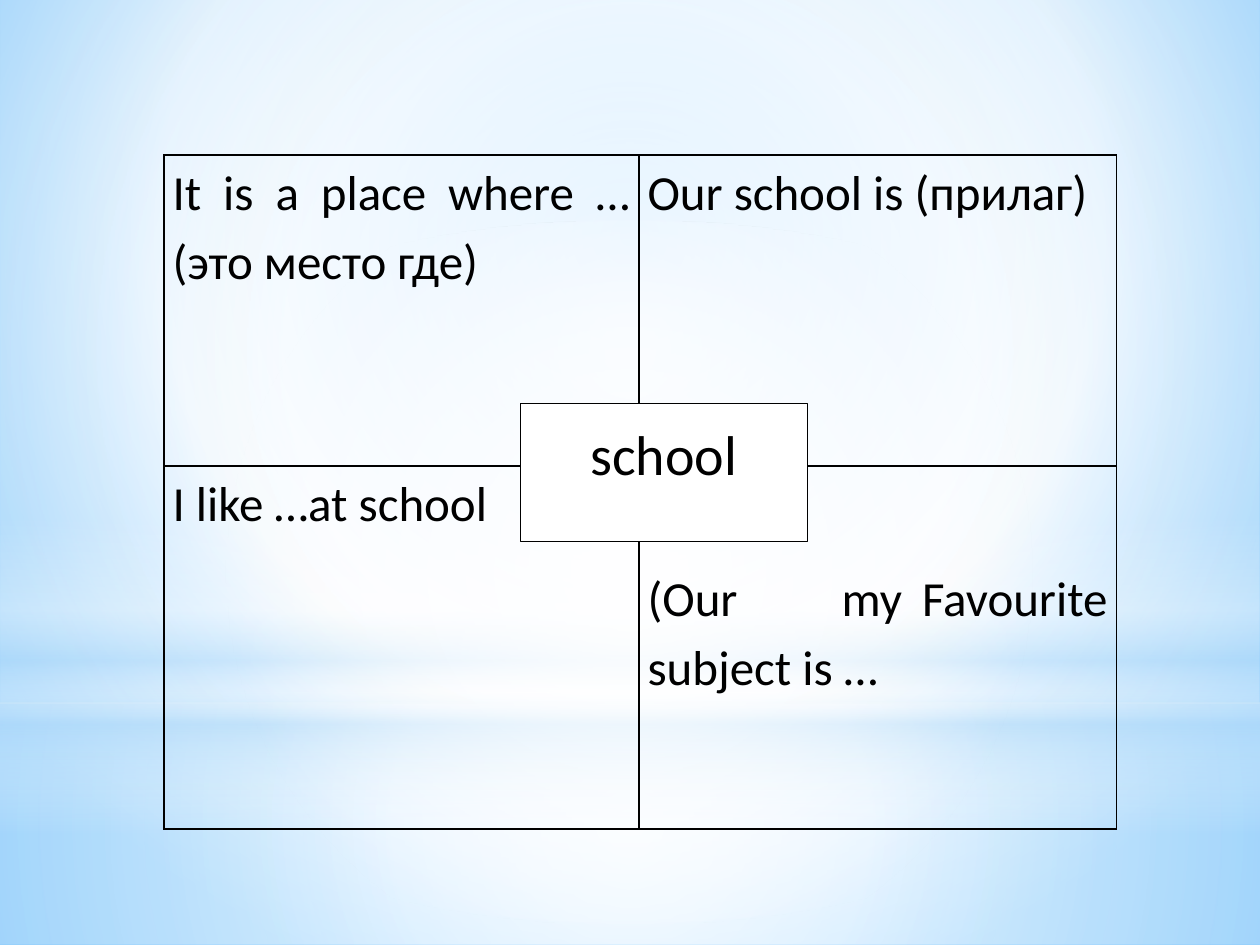
from dataclasses import dataclass

from lxml.etree import SubElement
from pptx import Presentation
from pptx.dml.color import RGBColor
from pptx.enum.shapes import MSO_SHAPE
from pptx.enum.text import MSO_ANCHOR, PP_ALIGN
from pptx.oxml import parse_xml
from pptx.oxml.ns import nsdecls, qn
from pptx.util import Inches, Pt

BLACK = "000000"
WHITE = "FFFFFF"
PALE_BLUE = "B4DCFA"
CENTER = (50, 50, 50, 50)


@dataclass
class Stop:
    position: int
    color: str
    opacity: int = 100


@dataclass
class Glow:
    shape_type: MSO_SHAPE
    top: float
    height: float
    stops: list[Stop]
    focus: tuple | None = CENTER  # None gives a vertical linear gradient


@dataclass
class Prompt:
    row: int
    column: int
    text: str
    margin_top: float = 0
    tab: float | None = None


BACKGROUND_STOPS = [Stop(0, "9ED5FF"), Stop(60, WHITE), Stop(100, "5BB9FF")]
GLOWS = [
    Glow(MSO_SHAPE.RECTANGLE, 5.58, 1.92,
         [Stop(0, WHITE, 91), Stop(37, WHITE, 76), Stop(100, PALE_BLUE, 79)]),
    Glow(MSO_SHAPE.RECTANGLE, 0, 5.58,
         [Stop(0, WHITE, 89), Stop(48, WHITE, 62), Stop(100, PALE_BLUE, 79)]),
    Glow(MSO_SHAPE.RECTANGLE, 4.12, 2.5,
         [Stop(0, WHITE, 0), Stop(29, WHITE, 30), Stop(45, PALE_BLUE, 40),
          Stop(55, WHITE, 26), Stop(65, PALE_BLUE, 60), Stop(100, WHITE, 0)], None),
    Glow(MSO_SHAPE.OVAL, 1.75, 5.58, [Stop(0, WHITE), Stop(56, WHITE, 0)]),
]
PROMPTS = [
    Prompt(0, 0, "It is a place where …(это место где)"),
    Prompt(0, 1, "Our school is (прилаг)"),
    Prompt(1, 0, "I like …at school"),
    Prompt(1, 1, "(Our\tmy Favourite subject is …", margin_top=0.75, tab=1.54),
]
COLUMN_WIDTHS = (3.77, 3.79)
ROW_HEIGHTS = (2.47, 2.88)


def rgb(color: str) -> RGBColor:
    return RGBColor.from_string(color)


def replace_with_gradient(solid_fill, stops: list[Stop], focus: tuple | None) -> None:
    stop_xml = "".join(
        f'<a:gs pos="{stop.position * 1000}"><a:srgbClr val="{stop.color}">'
        f'<a:alpha val="{stop.opacity * 1000}"/></a:srgbClr></a:gs>'
        for stop in stops
    )
    if focus is None:
        direction = '<a:lin ang="5400000" scaled="0"/>'
    else:
        sides = " ".join(f'{side}="{value * 1000}"' for side, value in zip("ltrb", focus))
        direction = f'<a:path path="circle"><a:fillToRect {sides}/></a:path>'
    gradient = parse_xml(
        f'<a:gradFill {nsdecls("a")} rotWithShape="1"><a:gsLst>{stop_xml}</a:gsLst>'
        f"{direction}</a:gradFill>"
    )
    solid_fill.getparent().replace(solid_fill, gradient)


def add_glow(slide, glow: Glow) -> None:
    shape = slide.shapes.add_shape(
        glow.shape_type, 0, Inches(glow.top), Inches(10), Inches(glow.height))
    shape.shadow.inherit = False
    shape.line.fill.background()
    shape.fill.solid()
    solid_fill = shape.element.xpath("./p:spPr/a:solidFill")[0]
    replace_with_gradient(solid_fill, glow.stops, glow.focus)


def write_text(text_frame, text: str, size: int, alignment: PP_ALIGN):
    text_frame.text = text
    text_frame.word_wrap = True
    paragraph = text_frame.paragraphs[0]
    paragraph.alignment = alignment
    paragraph.line_spacing = 1.15
    paragraph.space_after = Pt(10)
    for run in paragraph.runs:
        run.font.name = "Calibri"
        run.font.size = Pt(size)
        run.font.color.rgb = rgb(BLACK)
    return paragraph


def add_borders(cell) -> None:
    properties = cell._tc.get_or_add_tcPr()
    for index, side in enumerate(("lnL", "lnR", "lnT", "lnB")):
        border = parse_xml(
            f'<a:{side} {nsdecls("a")} w="{Pt(1)}"><a:solidFill>'
            f'<a:srgbClr val="{BLACK}"/></a:solidFill></a:{side}>'
        )
        properties.insert(index, border)


def fill_cell(table, prompt: Prompt) -> None:
    cell = table.cell(prompt.row, prompt.column)
    cell.fill.background()
    cell.margin_left = cell.margin_right = Inches(0.07)
    cell.margin_top = Inches(prompt.margin_top)
    cell.margin_bottom = 0
    add_borders(cell)
    paragraph = write_text(cell.text_frame, prompt.text, 28, PP_ALIGN.JUSTIFY)
    if prompt.tab is not None:
        tab_list = SubElement(paragraph._p.get_or_add_pPr(), qn("a:tabLst"))
        SubElement(tab_list, qn("a:tab"), pos=str(Inches(prompt.tab)), algn="l")


def add_prompt_table(slide) -> None:
    table = slide.shapes.add_table(
        len(ROW_HEIGHTS), len(COLUMN_WIDTHS), Inches(1.3), Inches(1.23),
        Inches(sum(COLUMN_WIDTHS)), Inches(sum(ROW_HEIGHTS))).table
    table.first_row = False
    table.horz_banding = False
    for column, width in zip(table.columns, COLUMN_WIDTHS):
        column.width = Inches(width)
    for row, height in zip(table.rows, ROW_HEIGHTS):
        row.height = Inches(height)
    for prompt in PROMPTS:
        fill_cell(table, prompt)


def add_topic_box(slide) -> None:
    box = slide.shapes.add_shape(
        MSO_SHAPE.RECTANGLE, Inches(4.13), Inches(3.2), Inches(2.28), Inches(1.1))
    box.shadow.inherit = False
    box.fill.solid()
    box.fill.fore_color.rgb = rgb(WHITE)
    box.line.color.rgb = rgb(BLACK)
    box.line.width = Pt(0.75)
    box.text_frame.vertical_anchor = MSO_ANCHOR.TOP
    write_text(box.text_frame, "school", 32, PP_ALIGN.CENTER)


def main() -> None:
    presentation = Presentation()
    presentation.slide_width = Inches(10)
    presentation.slide_height = Inches(7.5)
    slide = presentation.slides.add_slide(presentation.slide_layouts[6])

    # Sky-blue background with soft glows
    slide.background.fill.solid()
    background_fill = slide.element.xpath("./p:cSld/p:bg//a:solidFill")[0]
    replace_with_gradient(background_fill, BACKGROUND_STOPS, (20, 10, 20, 60))
    for glow in GLOWS:
        add_glow(slide, glow)

    # Four prompts around the topic
    add_prompt_table(slide)
    add_topic_box(slide)

    presentation.save("out.pptx")


if __name__ == "__main__":
    main()
